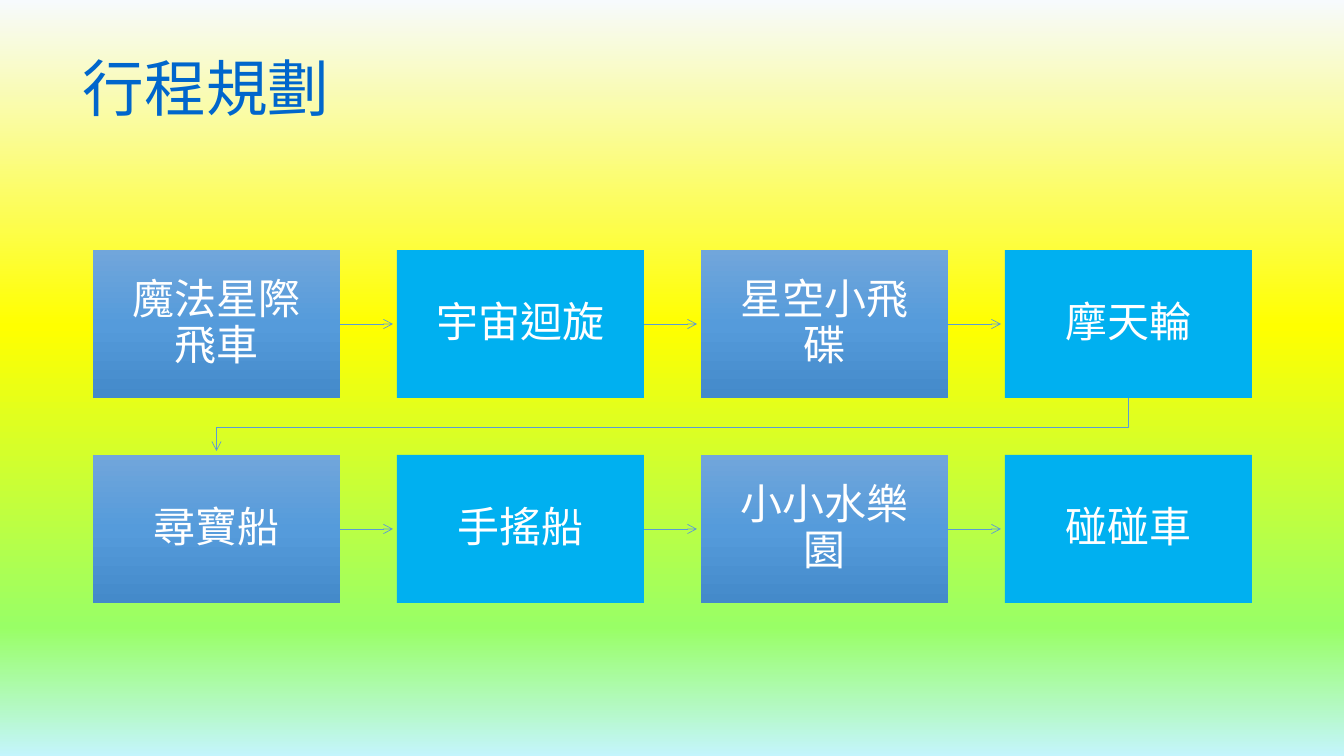
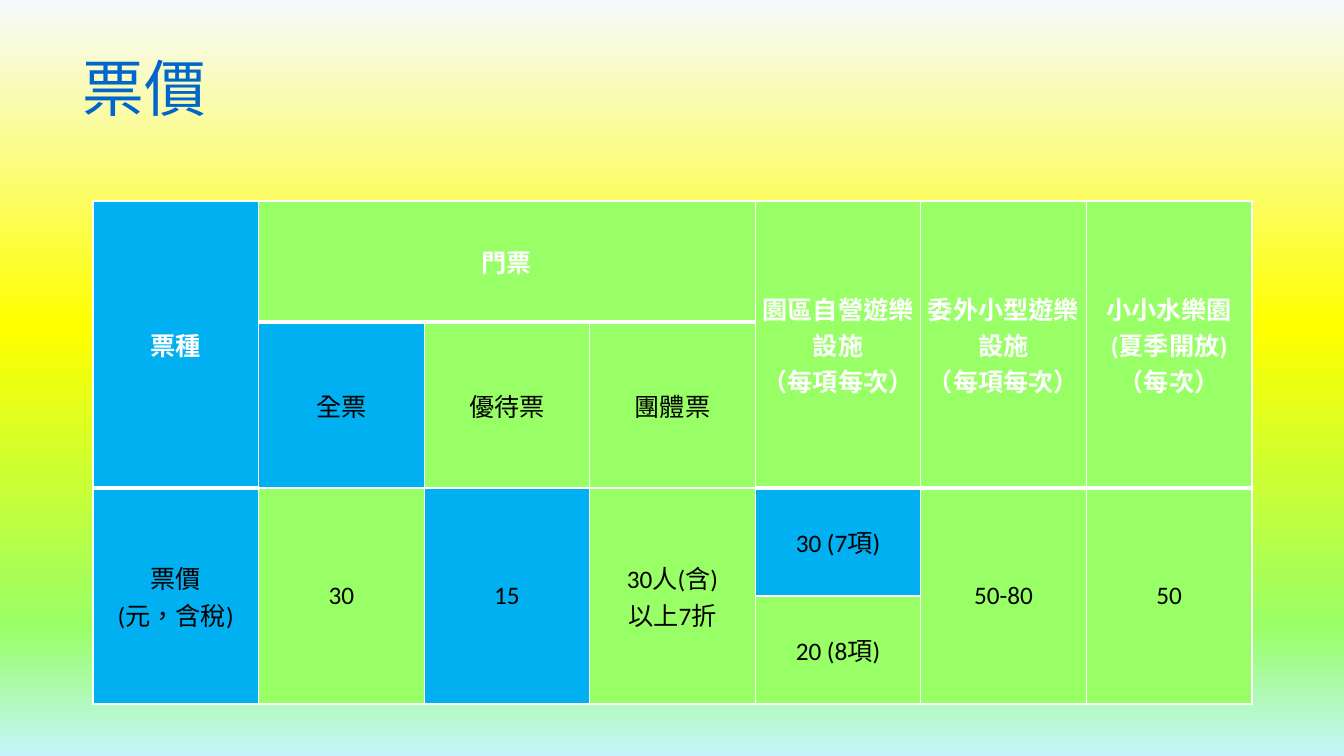
"""Build the trip route and ticket price slides."""
from lxml.etree import SubElement
from pptx import Presentation
from pptx.dml.color import RGBColor
from pptx.enum.lang import MSO_LANGUAGE_ID
from pptx.enum.shapes import MSO_CONNECTOR, MSO_SHAPE
from pptx.enum.text import MSO_ANCHOR, PP_ALIGN
from pptx.oxml import parse_xml
from pptx.oxml.ns import nsdecls, qn
from pptx.util import Emu, Pt

PX = 12192000 / 1344
WHITE = RGBColor(0xFF, 0xFF, 0xFF)
BLACK = RGBColor(0x00, 0x00, 0x00)
TITLE_BLUE = RGBColor(0x00, 0x66, 0xCC)
SKY = RGBColor(0x00, 0xB0, 0xF0)
LIME = RGBColor(0x99, 0xFF, 0x66)
ARROW_BLUE = RGBColor(0x5B, 0x9B, 0xD5)
YELLOW = RGBColor(0xFF, 0xFF, 0x00)
BACKDROP = [(0, RGBColor(0xF7, 0xFA, 0xFD)), (43, YELLOW), (83, LIME), (100, RGBColor(0xC4, 0xF5, 0xFC))]
CARD_BLUE = [(0, RGBColor(0x71, 0xA6, 0xDB)), (50, RGBColor(0x55, 0x9B, 0xDB)), (100, RGBColor(0x44, 0x8A, 0xCA))]
TITLE_FONT = "Noto Sans CJK JP"
BODY_FONT = "Calibri"


def px(*lengths):
    return [Emu(round(length * PX)) for length in lengths]


def fill_gradient(fill, owner, stops):
    fill.gradient()
    fill.gradient_angle = 270
    stop_list = next(owner.iter(qn("a:gsLst")))
    stop_list.clear()
    for percent, color in stops:
        stop = SubElement(stop_list, qn("a:gs"), pos=str(percent * 1000))
        SubElement(stop, qn("a:srgbClr"), val=str(color))


prs = Presentation()
prs.slide_width, prs.slide_height = px(1344, 756)
slides = []
for heading in ("行程規劃", "票價"):
    slide = prs.slides.add_slide(prs.slide_layouts[6])
    fill_gradient(slide.background.fill, slide._element, BACKDROP)
    title = slide.shapes.add_textbox(*px(73, 19, 1159, 146)).text_frame
    title.word_wrap = True
    title.vertical_anchor = MSO_ANCHOR.MIDDLE
    title.text = heading
    title.paragraphs[0].line_spacing = 0.9
    font = title.paragraphs[0].runs[0].font
    font.name, font.size, font.color.rgb = TITLE_FONT, Pt(44), TITLE_BLUE
    font.language_id = MSO_LANGUAGE_ID.TRADITIONAL_CHINESE
    SubElement(font._element, qn("a:ea"), typeface=TITLE_FONT)
    slides.append(slide)
route, prices = slides

STOPS = ["魔法星際飛車", "宇宙迴旋", "星空小飛碟", "摩天輪", "尋寶船", "手搖船", "小小水樂園", "碰碰車"]
COLUMNS = 4
LEFT, TOP, CARD_W, CARD_H = 93, 250, 247, 148
STEP_X, STEP_Y, ARROW = 304, 205, 53

arrows = []
for index, stop_name in enumerate(STOPS):
    row, column = divmod(index, COLUMNS)
    x, y = LEFT + column * STEP_X, TOP + row * STEP_Y
    card = route.shapes.add_shape(MSO_SHAPE.RECTANGLE, *px(x, y, CARD_W, CARD_H))
    card.shadow.inherit = False
    card.line.fill.background()
    if column % 2:
        card.fill.solid()
        card.fill.fore_color.rgb = SKY
    else:
        fill_gradient(card.fill, card._element, CARD_BLUE)
    frame = card.text_frame
    frame.word_wrap = True
    frame.vertical_anchor = MSO_ANCHOR.MIDDLE
    frame.margin_left, frame.margin_top, frame.margin_right, frame.margin_bottom = px(23, 23, 23, 23)
    frame.text = stop_name
    paragraph = frame.paragraphs[0]
    paragraph.alignment = PP_ALIGN.CENTER
    paragraph.line_spacing = 0.9
    font = paragraph.runs[0].font
    font.name, font.size, font.color.rgb = BODY_FONT, Pt(30), WHITE
    font.language_id = MSO_LANGUAGE_ID.TRADITIONAL_CHINESE
    if column < COLUMNS - 1:
        start, middle = x + CARD_W, y + CARD_H / 2
        arrow = route.shapes.add_connector(MSO_CONNECTOR.STRAIGHT, *px(start, middle, start + ARROW, middle))
        arrow.begin_connect(card, 3)
        arrows.append(arrow)

span = (COLUMNS - 1) * STEP_X
center_x = LEFT + (span + CARD_W) / 2
center_y = TOP + CARD_H + ARROW / 2
row_return = route.shapes.add_connector(
    MSO_CONNECTOR.ELBOW,
    *px(center_x - ARROW / 2, center_y - span / 2, center_x + ARROW / 2, center_y + span / 2))
row_return._element.spPr.find(qn("a:xfrm")).set("rot", "5400000")
bend = row_return._element.spPr.find(qn("a:prstGeom")).get_or_add_avLst()
SubElement(bend, qn("a:gd"), name="adj1", fmla="val 55000")
for arrow in arrows + [row_return]:
    arrow.line.color.rgb = ARROW_BLUE
    arrow.line.width = Pt(0.5)
    SubElement(arrow.line._get_or_add_ln(), qn("a:tailEnd"), type="arrow")
    SubElement(arrow._element.spPr, qn("a:effectLst"))

TICKETS = [
    ["票種", "門票", "", "", "園區自營遊樂設施\v（每項每次）", "委外小型遊樂設施\v（每項每次）",
     "小小水樂園\v(夏季開放)\v（每次）"],
    ["", "全票", "優待票", "團體票", "", "", ""],
    ["票價\v(元，含稅)", "30", "15", "30人(含)\v以上7折", "30 (7項)", "50-80", "50"],
    ["", "", "", "", "20 (8項)", "", ""],
]
ROW_HEIGHTS = [121, 166, 108, 108]
SKY_CELLS = {(0, 0), (1, 1), (2, 0), (2, 2), (2, 4)}
HEAVY_BELOW = {(0, column) for column in range(7)} | {(1, column) for column in (0, 4, 5, 6)}
MERGES = [((0, 1), (0, 3))]
MERGES += [((0, column), (1, column)) for column in (0, 4, 5, 6)]
MERGES += [((2, column), (3, column)) for column in (0, 1, 2, 3, 5, 6)]

table = prices.shapes.add_table(4, 7, *px(93, 201, 1159, sum(ROW_HEIGHTS))).table
table.first_row = table.horz_banding = False
for table_row, height in zip(table.rows, px(*ROW_HEIGHTS)):
    table_row.height = height
for r, texts in enumerate(TICKETS):
    for c, text in enumerate(texts):
        cell = table.cell(r, c)
        cell.fill.solid()
        cell.fill.fore_color.rgb = SKY if (r, c) in SKY_CELLS else LIME
        cell.vertical_anchor = MSO_ANCHOR.MIDDLE
        cell.margin_left, cell.margin_top, cell.margin_right, cell.margin_bottom = px(3, 3, 3, 3)
        top = 3 if (r - 1, c) in HEAVY_BELOW else 1
        bottom = 3 if (r, c) in HEAVY_BELOW else 1
        for place, (side, points) in enumerate([("L", 1), ("R", 1), ("T", top), ("B", bottom)]):
            cell._tc.get_or_add_tcPr().insert(place, parse_xml(
                f'<a:ln{side} {nsdecls("a")} w="{Pt(points)}"><a:solidFill>'
                f'<a:srgbClr val="{WHITE}"/></a:solidFill></a:ln{side}>'))
        if text:
            cell.text_frame.text = text
            paragraph = cell.text_frame.paragraphs[0]
            paragraph.alignment = PP_ALIGN.CENTER
            for run in paragraph.runs:
                run.font.name, run.font.size, run.font.bold = BODY_FONT, Pt(18), r == 0
                run.font.color.rgb = WHITE if r == 0 else BLACK
                run.font.language_id = MSO_LANGUAGE_ID.TRADITIONAL_CHINESE
for first, last in MERGES:
    table.cell(*first).merge(table.cell(*last))

prs.save("out.pptx")
